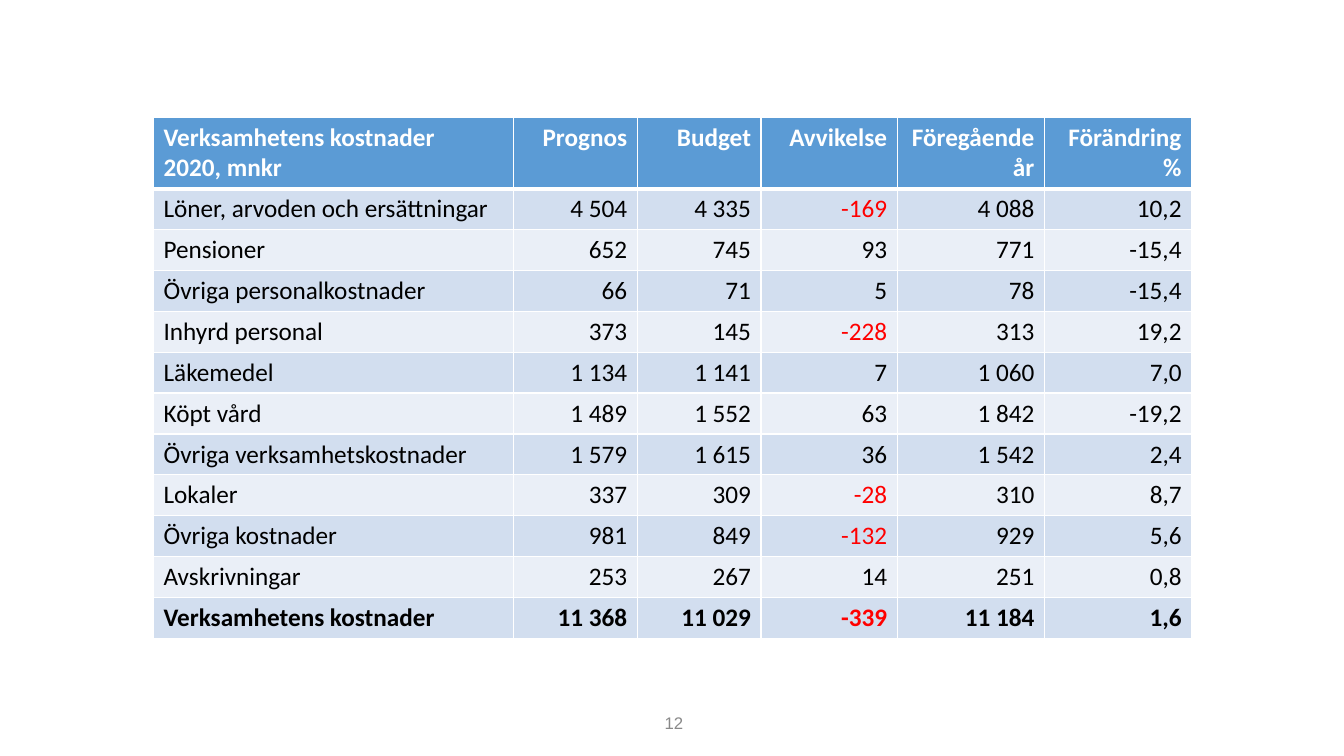
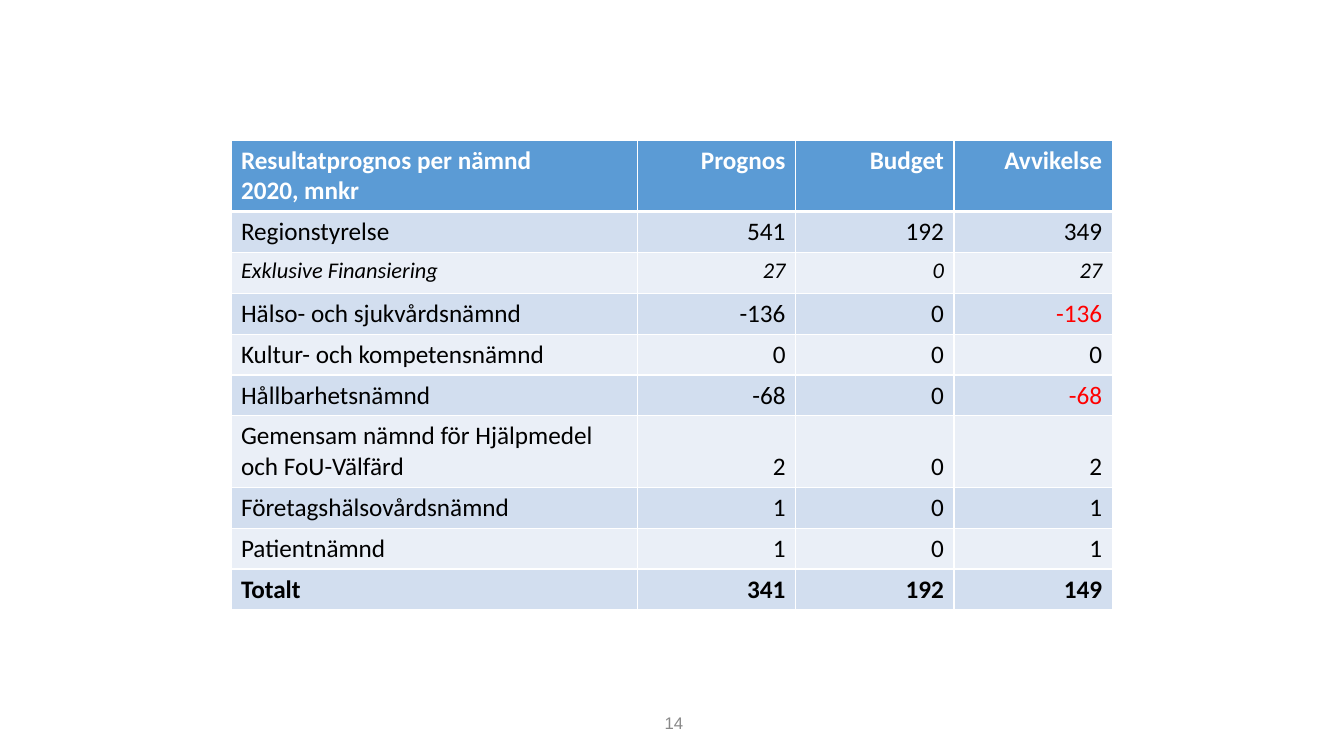
from lxml import etree
from pptx import Presentation
from pptx.dml.color import RGBColor
from pptx.enum import text
from pptx.oxml import ns
from pptx.util import Cm, Pt

# Content
COSTS = {
    "page": "12",
    "left": 3.87, "top": 2.95,
    "widths": (9.07, 3.12, 3.12, 3.43, 3.71, 3.71),
    "header": ("Verksamhetens kostnader\n2020, mnkr", "Prognos", "Budget",
               "Avvikelse", "Föregående år", "Förändring %"),
    "rows": [
        ("Löner, arvoden och ersättningar", "4 504", "4 335", "-169", "4 088", "10,2"),
        ("Pensioner", "652", "745", "93", "771", "-15,4"),
        ("Övriga personalkostnader", "66", "71", "5", "78", "-15,4"),
        ("Inhyrd personal", "373", "145", "-228", "313", "19,2"),
        ("Läkemedel", "1 134", "1 141", "7", "1 060", "7,0"),
        ("Köpt vård", "1 489", "1 552", "63", "1 842", "-19,2"),
        ("Övriga verksamhetskostnader", "1 579", "1 615", "36", "1 542", "2,4"),
        ("Lokaler", "337", "309", "-28", "310", "8,7"),
        ("Övriga kostnader", "981", "849", "-132", "929", "5,6"),
        ("Avskrivningar", "253", "267", "14", "251", "0,8"),
        ("Verksamhetens kostnader", "11 368", "11 029", "-339", "11 184", "1,6"),
    ],
}
RESULTS = {
    "page": "14",
    "left": 5.82, "top": 3.53,
    "widths": (10.24, 3.99, 3.99, 3.99),
    "header": ("Resultatprognos per nämnd\n2020, mnkr", "Prognos", "Budget", "Avvikelse"),
    "rows": [
        ("Regionstyrelse", "541", "192", "349"),
        ("Exklusive Finansiering", "27", "0", "27"),
        ("Hälso- och sjukvårdsnämnd", "-136", "0", "-136"),
        ("Kultur- och kompetensnämnd", "0", "0", "0"),
        ("Hållbarhetsnämnd", "-68", "0", "-68"),
        ("Gemensam nämnd för Hjälpmedel och FoU-Välfärd", "2", "0", "2"),
        ("Företagshälsovårdsnämnd", "1", "0", "1"),
        ("Patientnämnd", "1", "0", "1"),
        ("Totalt", "341", "192", "149"),
    ],
}
SUBITEMS = {"Exklusive Finansiering"}
TWO_LINE_LABELS = {"Gemensam nämnd för Hjälpmedel och FoU-Välfärd"}

# Shared style
WHITE = RGBColor(0xFF, 0xFF, 0xFF)
BLACK = RGBColor(0x00, 0x00, 0x00)
RED = RGBColor(0xFF, 0x00, 0x00)
GREY = RGBColor(0x89, 0x89, 0x89)
HEADER_BLUE = RGBColor(0x5B, 0x9B, 0xD5)
BANDS = (RGBColor(0xEA, 0xEF, 0xF7), RGBColor(0xD2, 0xDE, 0xEF))
ONE_LINE, TWO_LINES = Cm(1.03), Cm(1.8)
DEVIATION = 3  # column where negative values are red


def set_borders(cell, bottom):
    properties = cell._tc.get_or_add_tcPr()
    for side, width in (("L", 1), ("R", 1), ("T", 1), ("B", bottom)):
        line = etree.SubElement(properties, ns.qn(f"a:ln{side}"), w=str(Pt(width)))
        fill = etree.SubElement(line, ns.qn("a:solidFill"))
        etree.SubElement(fill, ns.qn("a:srgbClr"), val=str(WHITE))


def style_text(paragraph, name, size, color, right):
    paragraph.font.name = name
    paragraph.font.size = Pt(size)
    paragraph.font.color.rgb = color
    paragraph.alignment = text.PP_ALIGN.RIGHT if right else text.PP_ALIGN.LEFT


def add_cost_table(slide, content):
    rows = [content["header"], *content["rows"]]
    widths = [Cm(width) for width in content["widths"]]
    heights = [TWO_LINES if row == 0 or values[0] in TWO_LINE_LABELS else ONE_LINE
               for row, values in enumerate(rows)]
    table = slide.shapes.add_table(
        len(rows), len(widths), Cm(content["left"]), Cm(content["top"]),
        sum(widths), sum(heights)).table
    for column, width in zip(table.columns, widths):
        column.width = width
    for row, values in enumerate(rows):
        table.rows[row].height = heights[row]
        header, total = row == 0, row == len(rows) - 1
        subitem = values[0] in SUBITEMS
        for column, value in enumerate(values):
            cell = table.cell(row, column)
            cell.text = value
            set_borders(cell, bottom=3 if header else 1)
            cell.fill.solid()
            cell.fill.fore_color.rgb = HEADER_BLUE if header else BANDS[row % 2]
            if column and values[0] in TWO_LINE_LABELS:
                cell.vertical_anchor = text.MSO_ANCHOR.BOTTOM
            negative = column == DEVIATION and value.startswith("-")
            color = WHITE if header else RED if negative else BLACK
            for paragraph in cell.text_frame.paragraphs:
                style_text(paragraph, "Calibri", 16 if subitem else 18, color, column > 0)
                paragraph.font.bold = header or total
                paragraph.font.italic = subitem


def add_page_number(slide, page):
    frame = slide.shapes.add_textbox(Cm(15.67), Cm(17.7), Cm(1.8), Cm(1.02)).text_frame
    frame.word_wrap = True
    frame.vertical_anchor = text.MSO_ANCHOR.MIDDLE
    frame.text = page
    style_text(frame.paragraphs[0], "Arial", 12, GREY, right=True)


def main():
    deck = Presentation()
    deck.slide_width, deck.slide_height = Cm(33.87), Cm(19.05)
    for content in (COSTS, RESULTS):
        slide = deck.slides.add_slide(deck.slide_layouts[6])
        add_cost_table(slide, content)
        add_page_number(slide, content["page"])
    deck.save("out.pptx")


if __name__ == "__main__":
    main()
